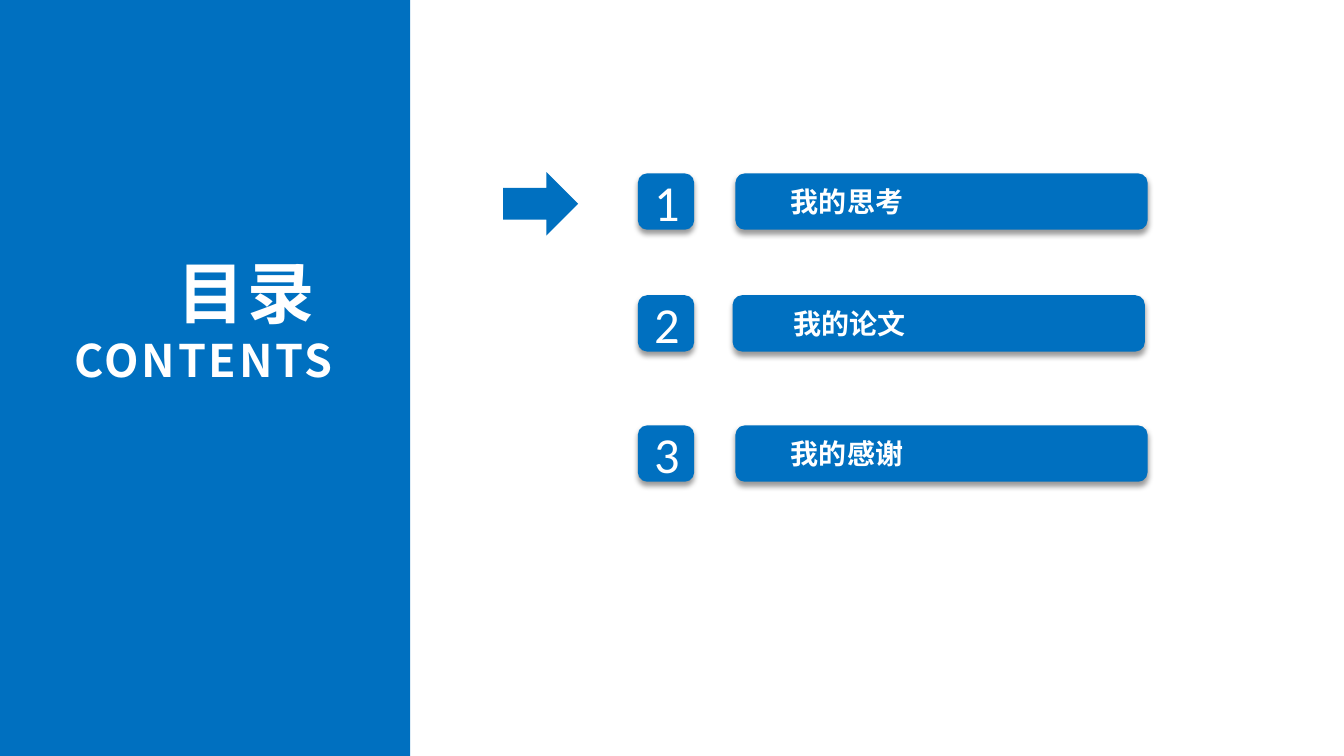
import pptx
import pptx.dml.color
import pptx.enum.shapes
import pptx.enum.text
import pptx.oxml
import pptx.oxml.ns
import pptx.util
from pptx.util import Cm

BLUE = pptx.dml.color.RGBColor(0x00, 0x70, 0xC0)
WHITE = pptx.dml.color.RGBColor(0xFF, 0xFF, 0xFF)
PRESET = pptx.enum.shapes.MSO_SHAPE
ALIGN = pptx.enum.text.PP_ALIGN
ANCHOR = pptx.enum.text.MSO_ANCHOR
FIT = pptx.enum.text.MSO_AUTO_SIZE
SHADOW = (
    f'<a:effectLst {pptx.oxml.ns.nsdecls("a")}>'
    '<a:outerShdw blurRad="50800" dist="38100" dir="5400000" algn="t" rotWithShape="0">'
    '<a:srgbClr val="000000"><a:alpha val="40000"/></a:srgbClr>'
    '</a:outerShdw></a:effectLst>'
)


class ContentsSlide:
    number_font = {"name": "Calibri", "size": pptx.util.Pt(36)}
    label_font = {"name": "Noto Sans CJK SC", "size": pptx.util.Pt(20), "bold": True}
    frame_format = {
        "margin_left": Cm(0.34), "margin_right": Cm(0.34),
        "margin_top": Cm(0.17), "margin_bottom": Cm(0.17), "word_wrap": True,
    }

    def __init__(self, deck):
        self.slide = deck.slides.add_slide(deck.slide_layouts[6])

    def block(self, preset, left, top, width, height, shadow=False, parent=None):
        shapes = (parent or self.slide).shapes
        block = shapes.add_shape(preset, Cm(left), Cm(top), Cm(width), Cm(height))
        block.fill.solid()
        block.fill.fore_color.rgb = BLUE
        block.line.fill.background()
        if shadow:
            block._element.spPr.append(pptx.oxml.parse_xml(SHADOW))
        else:
            block.shadow.inherit = False
        return block

    def fill_frame(self, frame, lines, align, spacing=0, **frame_extra):
        for key, value in {**self.frame_format, **frame_extra}.items():
            setattr(frame, key, value)
        for index, (words, font_format) in enumerate(lines):
            paragraph = frame.add_paragraph() if index else frame.paragraphs[0]
            paragraph.alignment = align
            run = paragraph.add_run()
            run.text = words
            for key, value in font_format.items():
                setattr(run.font, key, value)
            run.font.color.rgb = WHITE
            properties = run._r.get_or_add_rPr()
            east_asian = pptx.oxml.parse_xml(
                f'<a:ea {pptx.oxml.ns.nsdecls("a")} typeface="{font_format["name"]}"/>')
            properties.find(pptx.oxml.ns.qn("a:latin")).addnext(east_asian)
            if spacing:
                properties.set("spc", str(spacing * 100))

    def text(self, left, top, width, height, lines, align=ALIGN.LEFT, spacing=0, parent=None):
        box = (parent or self.slide).shapes.add_textbox(
            Cm(left), Cm(top), Cm(width), Cm(height))
        self.fill_frame(box.text_frame, lines, align, spacing, auto_size=FIT.SHAPE_TO_FIT_TEXT)

    def entry(self, number, topic, top, bar_left, topic_left):
        badge = self.block(PRESET.ROUNDED_RECTANGLE, 16.08, top, 1.42, 1.42, shadow=True)
        self.fill_frame(badge.text_frame, [(str(number), self.number_font)], ALIGN.CENTER,
                        vertical_anchor=ANCHOR.MIDDLE)
        group = self.slide.shapes.add_group_shape()
        self.block(PRESET.ROUNDED_RECTANGLE, bar_left, top, 10.39, 1.42, True, group)
        self.text(topic_left, top + 0.12, 7.37, 1.19, [(topic, self.label_font)], parent=group)

    def heading(self, left, top, width, height, sizes):
        lines = [(words, {**self.label_font, "size": pptx.util.Pt(size)})
                 for words, size in sizes]
        self.text(left, top, width, height, lines, ALIGN.RIGHT, spacing=2)


def main():
    deck = pptx.Presentation()
    deck.slide_width, deck.slide_height = Cm(33.88), Cm(19.05)
    contents = ContentsSlide(deck)
    contents.block(PRESET.RECTANGLE, 0, 0, 10.34, 19.05)
    entries = [
        ("我的思考", 4.37, 18.54, 19.6),
        ("我的论文", 7.44, 18.47, 19.67),
        ("我的感谢", 10.72, 18.54, 19.6),
    ]
    for number, entry in enumerate(entries, 1):
        contents.entry(number, *entry)
    contents.heading(0.94, 6.17, 7.8, 3.76, [("目录 ", 48), ("CONTENTS", 32)])
    pointer = contents.block(PRESET.DOWN_ARROW, 12.83, 4.19, 1.6, 1.89)
    pointer.rotation = 270
    deck.save("out.pptx")


if __name__ == "__main__":
    main()
